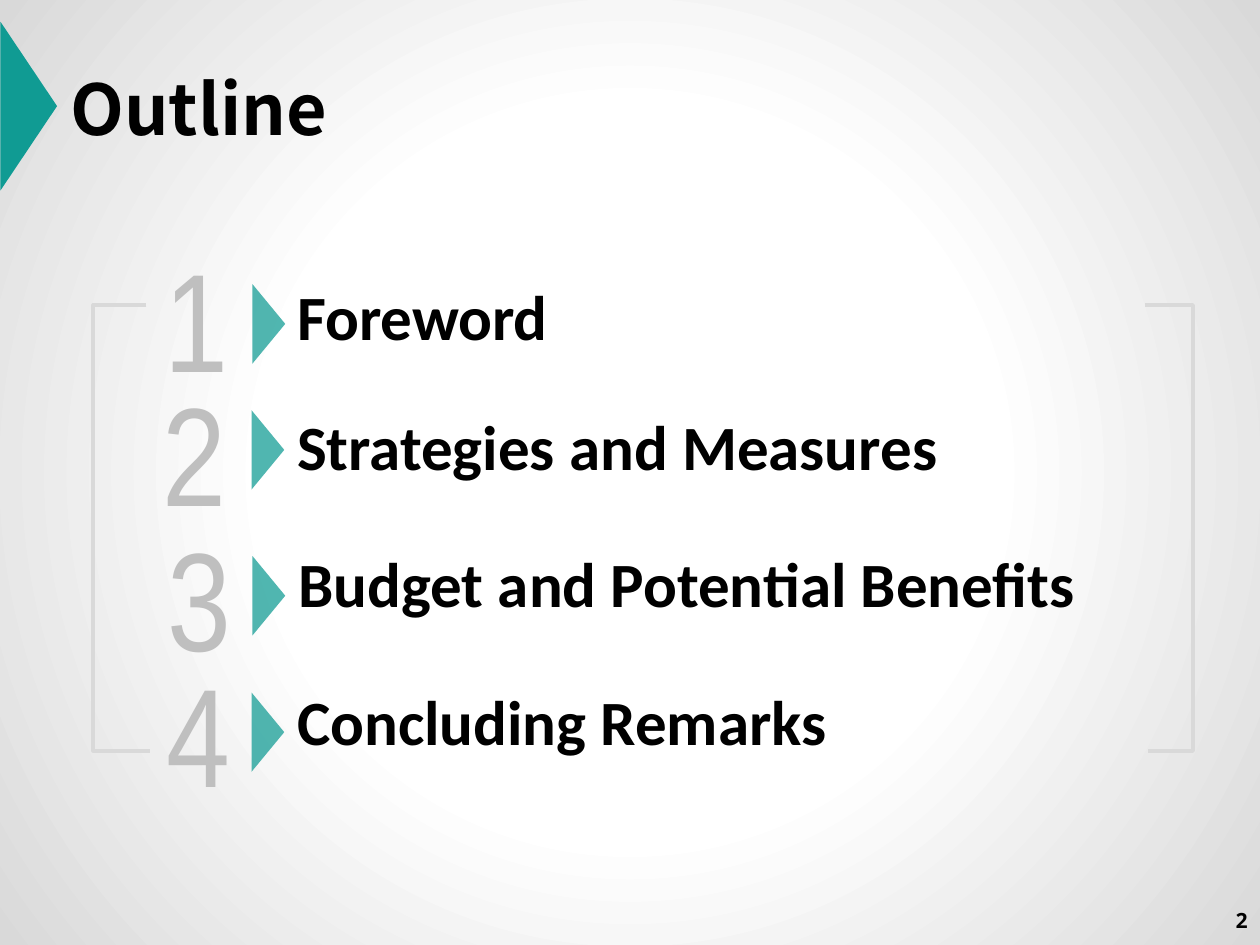
"""Build the outline slide with four numbered topics."""
from pptx import Presentation
from pptx.dml.color import RGBColor
from pptx.enum.shapes import MSO_SHAPE
from pptx.enum.text import MSO_ANCHOR, PP_ALIGN
from pptx.oxml import parse_xml
from pptx.oxml.ns import qn
from pptx.util import Cm, Pt
from lxml import etree

TRIANGLE = MSO_SHAPE.ISOSCELES_TRIANGLE
MIDDLE = MSO_ANCHOR.MIDDLE
LEFT, RIGHT = PP_ALIGN.LEFT, PP_ALIGN.RIGHT
NS = "http://schemas.openxmlformats.org"
COLORS = {"teal": "109B93", "number": "BFBFBF", "bracket": "D9D9D9",
          "text": "000000", "center": "FFFFFF", "edge": "D9D9D9"}

deck = Presentation()
deck.slide_width, deck.slide_height = Cm(25.4), Cm(19.05)
slide = deck.slides.add_slide(deck.slide_layouts[6])
shapes = slide.shapes

back = parse_xml(
    f'<p:bg xmlns:p="{NS}/presentationml/2006/main" xmlns:a="{NS}/drawingml/2006/main">'
    '<p:bgPr><a:gradFill rotWithShape="1"><a:gsLst>'
    f'<a:gs pos="46000"><a:srgbClr val="{COLORS["center"]}"/></a:gs>'
    f'<a:gs pos="100000"><a:srgbClr val="{COLORS["edge"]}"/></a:gs>'
    '</a:gsLst><a:path path="circle">'
    '<a:fillToRect l="50000" t="50000" r="50000" b="50000"/></a:path>'
    '</a:gradFill><a:effectLst/></p:bgPr></p:bg>')
slide.element.cSld.insert(0, back)


def add_text(text, box, size, face, color="text", bold=True, align=LEFT):
    frame = shapes.add_textbox(*map(Cm, box)).text_frame
    frame.word_wrap = True
    par = frame.paragraphs[0]
    par.text, par.alignment = text, align
    font = par.font
    font.size, font.name, font.bold = Pt(size), face, bold
    font.color.rgb = RGBColor.from_string(COLORS[color])
    return frame


def add_arrow(box, alpha=100):
    arrow = shapes.add_shape(TRIANGLE, *map(Cm, box))
    arrow.rotation = 90
    arrow.shadow.inherit = False
    arrow.line.fill.background()
    arrow.fill.solid()
    arrow.fill.fore_color.rgb = RGBColor.from_string(COLORS["teal"])
    if alpha < 100:
        tint = arrow.element.spPr.find(".//" + qn("a:srgbClr"))
        etree.SubElement(tint, qn("a:alpha"), val=str(alpha * 1000))


add_arrow((-1.12, 1.57, 3.4, 1.14))
add_text("Outline", (1.17, 1.19, 7.54, 1.96), 40, "Noto Sans CJK SC")

for top, side, foot in ((2.95, 1.88, 3.02), (23.09, 24.05, 23.14)):
    pen = shapes.build_freeform(Cm(top), Cm(6.15))
    pen.add_line_segments(
        [(Cm(side), Cm(6.15)), (Cm(side), Cm(15.14)), (Cm(foot), Cm(15.14))],
        close=False)
    bracket = pen.convert_to_shape()
    bracket.shadow.inherit = False
    bracket.fill.background()
    bracket.line.width = Pt(2)
    bracket.line.color.rgb = RGBColor.from_string(COLORS["bracket"])

topics = [
    ("Foreword", (3.07, 4.57), (4.62, 6.2), (5.74, 5.46), 6.96),
    ("Strategies and Measures", (3.02, 7.26), (4.6, 8.74), (5.74, 8.1), 18.75),
    ("Budget and Potential Benefits", (3.12, 10.19), (4.62, 11.68), (5.77, 10.85), 17.81),
    ("Concluding Remarks", (3.1, 12.93), (4.6, 14.43), (5.74, 13.64), 14.68),
]
for count, (topic, digit, arrow, label, width) in enumerate(topics, 1):
    add_text(str(count), (*digit, 3.33, 3.68), 80, "Arial Narrow", "number", False)
    add_arrow((*arrow, 1.6, 0.66), 73)
    add_text(topic, (*label, width, 1.8), 36, "Calibri")

page = add_text("2", (19.69, 18.03, 5.72, 1.02), 12, "Noto Sans Mono", align=RIGHT)
page.vertical_anchor = MIDDLE

deck.save("out.pptx")
